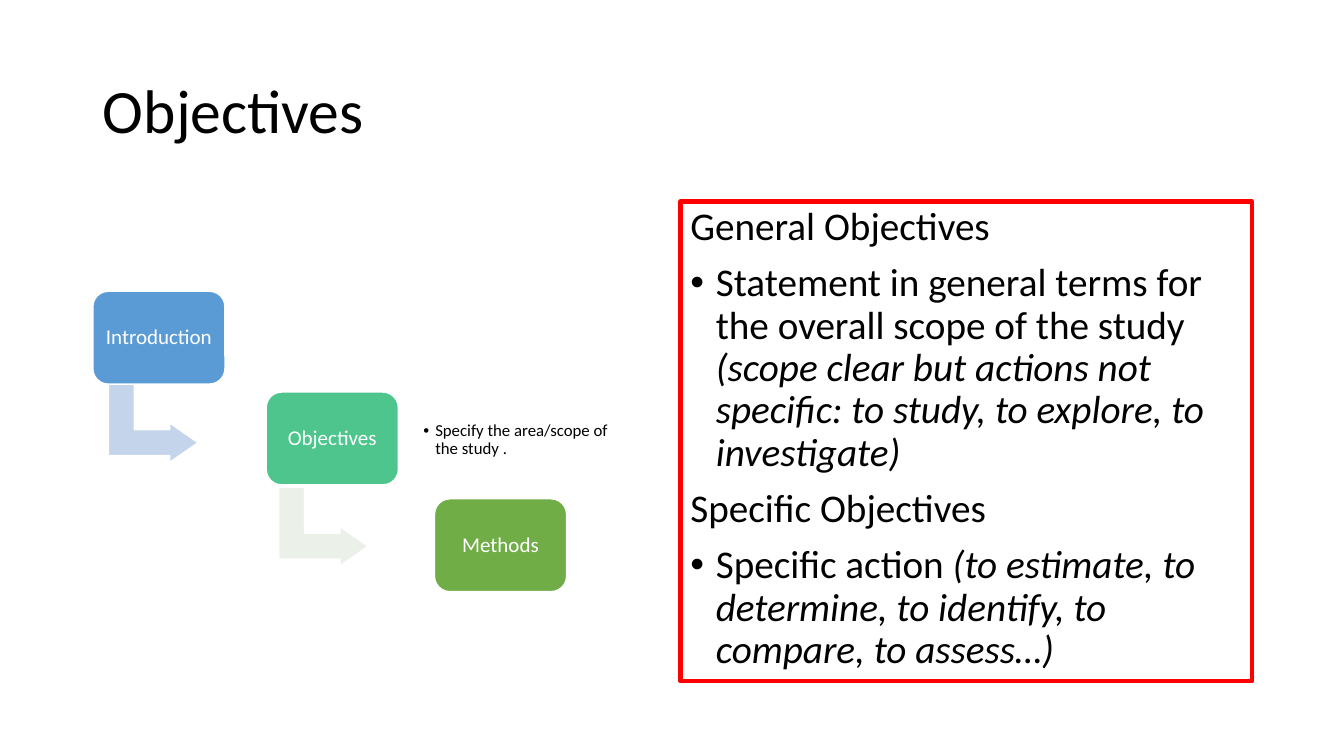
"""Build the Objectives slide: a three-step cascade beside a framed outline."""
from pptx import Presentation
from pptx import util as u
from pptx.dml.color import RGBColor
from pptx.enum import shapes, text
from pptx.oxml import xmlchemy

COLORS = {
    "black": "000000", "white": "FFFFFF", "red": "FF0000",
    "blue": "5B9BD5", "teal": "4DC58D", "green": "70AD47",
    "pale_blue": "C4D5EB", "pale_green": "EBF1E9",
}
FONT = "Calibri"
STEPS = [
    ("Introduction", 2.34, 7.34, "blue"),
    ("Objectives", 6.71, 9.88, "teal"),
    ("Methods", 10.95, 12.57, "green"),
]
ARROWS = [(2.87, 9.53, "pale_blue"), (7.16, 12.14, "pale_green")]
OUTLINE = [
    ("General Objectives", "", False),
    ("Statement in general terms for the overall scope of the study ",
     "(scope clear but actions not specific: to study, to explore, to investigate)", True),
    ("Specific Objectives", "", False),
    ("Specific action ",
     "(to estimate, to determine, to identify, to compare, to assess…)", True),
]


def rgb(name):
    return RGBColor.from_string(COLORS[name])


def box(x, y, w, h):
    return u.Cm(x), u.Cm(y), u.Cm(w), u.Cm(h)


def setup_frame(sp, anchor, inset=None):
    tf = sp.text_frame
    tf.word_wrap = True
    tf.auto_size = text.MSO_AUTO_SIZE.NONE
    tf.vertical_anchor = anchor
    if inset is not None:
        tf.margin_left = tf.margin_right = u.Cm(inset)
        tf.margin_top = tf.margin_bottom = u.Cm(inset)
    return tf


def format_paragraph(p, size, color="black", align=text.PP_ALIGN.LEFT, before=0):
    p.alignment = align
    p.line_spacing = 0.9
    p.space_before = u.Pt(before)
    for r in p.runs:
        r.font.name = FONT
        r.font.size = u.Pt(size)
        r.font.color.rgb = rgb(color)


def add_bullet(p, indent):
    pPr = p._p.get_or_add_pPr()
    pPr.set("marL", str(u.Cm(indent)))
    pPr.set("indent", str(-u.Cm(indent)))
    for tag, key, value in (("a:buFont", "typeface", "Arial"), ("a:buChar", "char", "•")):
        el = xmlchemy.OxmlElement(tag)
        el.set(key, value)
        pPr.append(el)


def add_block(s, kind, frame, fill):
    sp = s.shapes.add_shape(kind, *frame)
    sp.shadow.inherit = False
    sp.fill.solid()
    sp.fill.fore_color.rgb = rgb(fill)
    sp.line.color.rgb = rgb("white")
    sp.line.width = u.Pt(1)
    return sp


def add_step(s, label, x, y, fill):
    sp = add_block(s, shapes.MSO_SHAPE.ROUNDED_RECTANGLE, box(x, y, 3.33, 2.34), fill)
    tf = setup_frame(sp, text.MSO_ANCHOR.MIDDLE, 0.15)
    tf.text = label
    format_paragraph(tf.paragraphs[0], 15, "white", text.PP_ALIGN.CENTER)


def add_arrow(s, x, y, fill):
    sp = add_block(s, shapes.MSO_SHAPE.BENT_UP_ARROW, box(x, y, 1.98, 2.26), fill)
    sp.rotation = 90
    for i, value in enumerate((0.33, 0.25, 0.36)):
        sp.adjustments[i] = value


def add_note(s, note):
    sp = s.shapes.add_textbox(*box(10.52, 10.16, 5.46, 1.88))
    tf = setup_frame(sp, text.MSO_ANCHOR.MIDDLE, 0.15)
    tf.text = note
    p = tf.paragraphs[0]
    format_paragraph(p, 12)
    add_bullet(p, 0.3)


def add_outline(s):
    sp = s.shapes.add_textbox(*box(17.15, 5.08, 14.4, 12.09))
    sp.line.color.rgb = rgb("red")
    sp.line.width = u.Pt(3)
    tf = setup_frame(sp, text.MSO_ANCHOR.TOP)
    for i, (plain, italic, bulleted) in enumerate(OUTLINE):
        p = tf.add_paragraph() if i else tf.paragraphs[0]
        p.text = plain
        if italic:
            r = p.add_run()
            r.text = italic
            r.font.italic = True
        format_paragraph(p, 28, before=10)
        if bulleted:
            add_bullet(p, 0.64)


def set_title(s, title):
    sp = s.shapes.title
    sp.left, sp.top, sp.width, sp.height = box(2.34, 1.02, 29.21, 3.68)
    tf = setup_frame(sp, text.MSO_ANCHOR.MIDDLE)
    tf.text = title
    format_paragraph(tf.paragraphs[0], 44)


def main():
    prs = Presentation()
    prs.slide_width, prs.slide_height = u.Cm(33.87), u.Cm(19.05)
    s = prs.slides.add_slide(prs.slide_layouts.get_by_name("Title Only"))
    set_title(s, "Objectives")
    for arrow in ARROWS:
        add_arrow(s, *arrow)
    for step in STEPS:
        add_step(s, *step)
    add_note(s, "Specify the area/scope of the study .")
    add_outline(s)
    prs.save("out.pptx")


if __name__ == "__main__":
    main()
